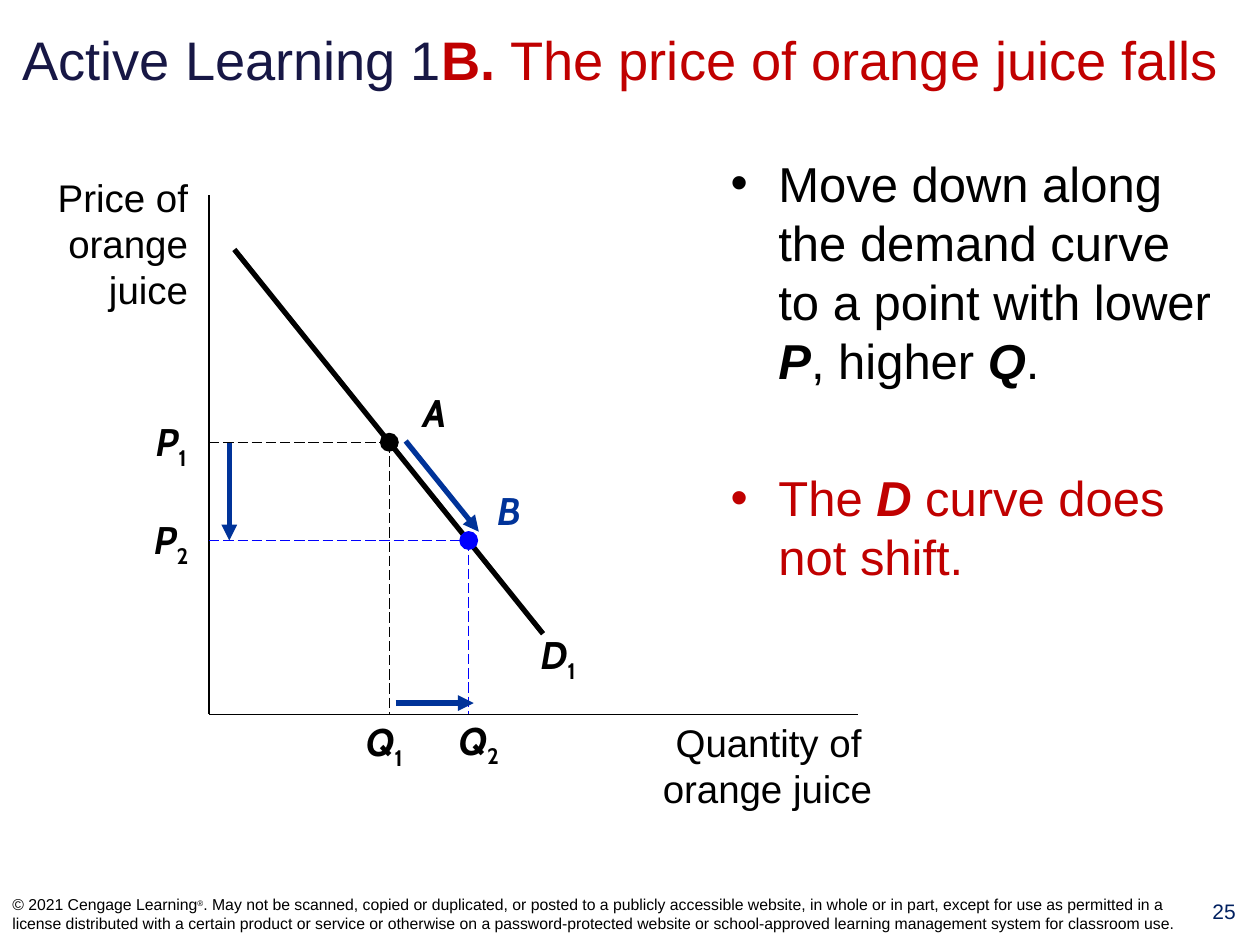
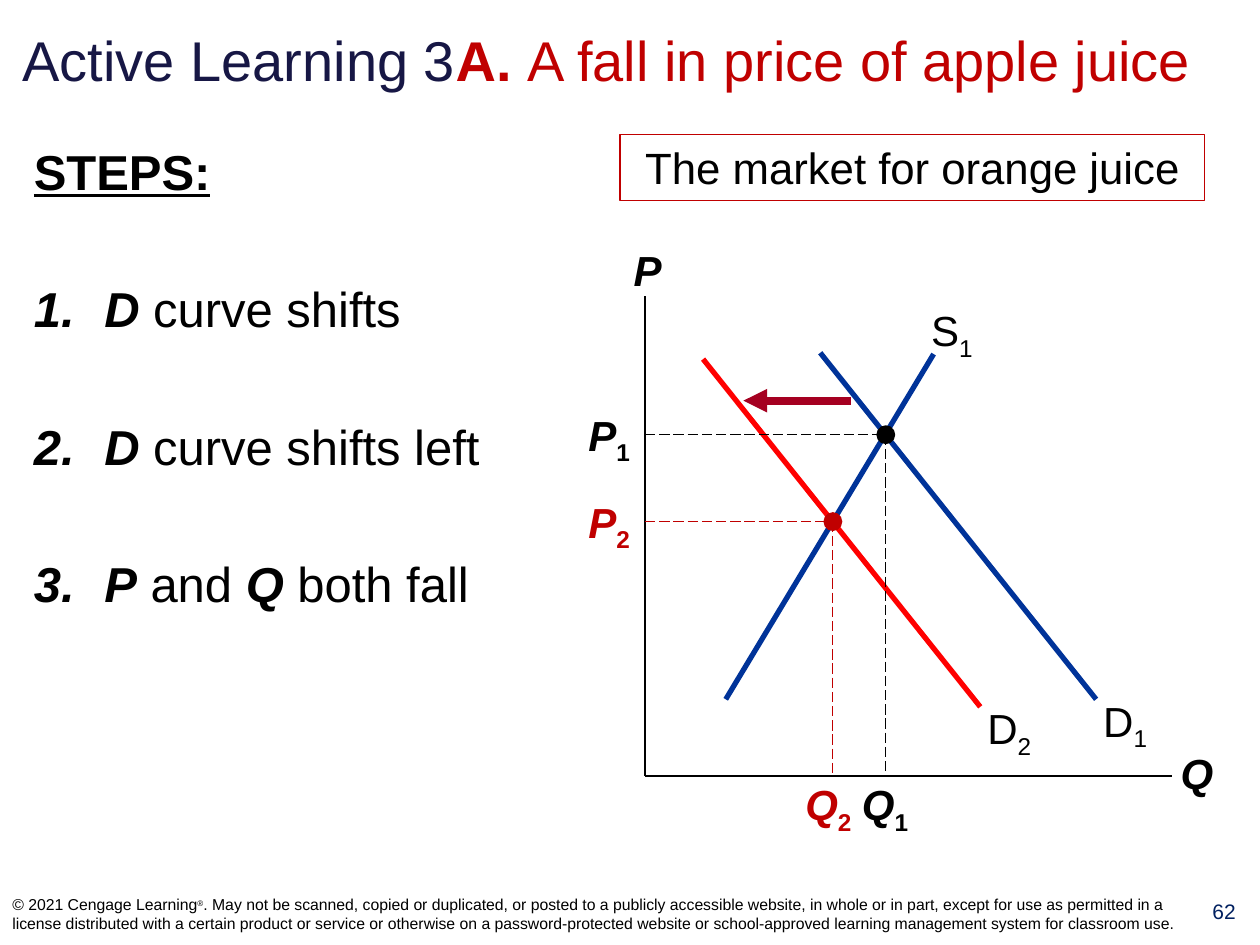
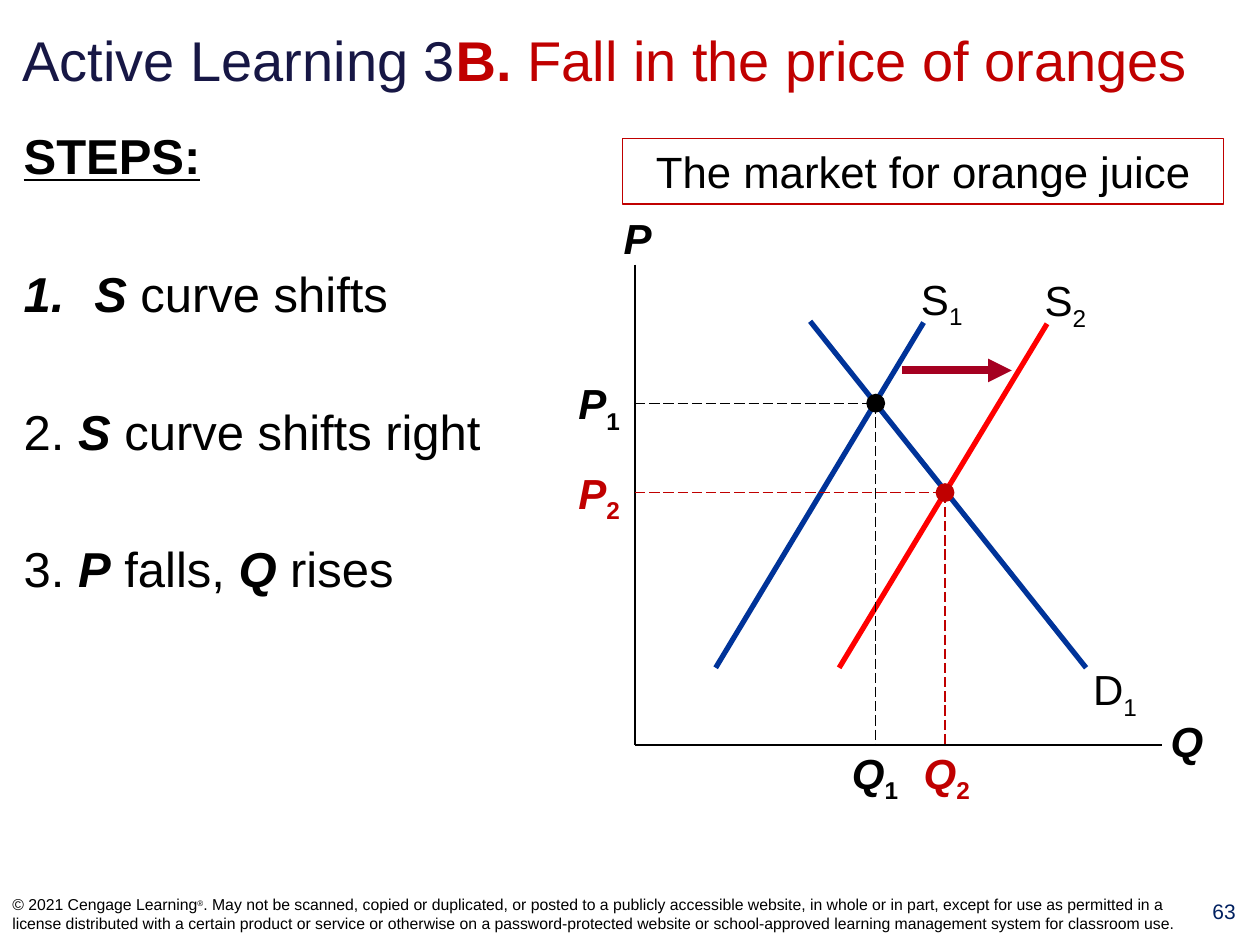
from dataclasses import dataclass
from typing import NamedTuple, Optional

from lxml.etree import SubElement
from pptx import Presentation
from pptx.dml.color import RGBColor
from pptx.enum.dml import MSO_LINE
from pptx.enum.shapes import MSO_CONNECTOR, MSO_SHAPE
from pptx.enum.text import MSO_ANCHOR as Anchor, PP_ALIGN as Align
from pptx.oxml.ns import qn
from pptx.util import Inches, Pt

BLACK = RGBColor(0x00, 0x00, 0x00)
WHITE = RGBColor(0xFF, 0xFF, 0xFF)
NAVY = RGBColor(0x17, 0x17, 0x45)
PAGE_BLUE = RGBColor(0x00, 0x20, 0x60)
CURVE_BLUE = RGBColor(0x00, 0x33, 0x99)
POINT_BLUE = RGBColor(0x00, 0x00, 0xFF)
DARK_RED = RGBColor(0xC0, 0x00, 0x00)
CURVE_RED = RGBColor(0xFF, 0x00, 0x00)
ARROW_RED = RGBColor(0xA5, 0x00, 0x21)

LICENSE = (
    ". May not be scanned, copied or duplicated, or posted to a publicly accessible "
    "website, in whole or in part, except for use as permitted in a license distributed "
    "with a certain product or service or otherwise on a password-protected website or "
    "school-approved learning management system for classroom use."
)
DOT_SIZE = 0.15
STEP_GAP = 45  # points between body paragraphs


class Point(NamedTuple):
    x: float
    y: float


class Area(NamedTuple):
    left: float
    top: float
    width: float
    height: float


@dataclass
class Span:
    text: str
    bold: bool = False
    italic: bool = False
    underline: bool = False
    color: Optional[RGBColor] = None
    size: Optional[float] = None
    baseline: int = 0


@dataclass
class Para:
    spans: list[Span]
    bullet: str = ""  # a character, or "1." for automatic numbers
    indent: float = 0
    color: RGBColor = BLACK


@dataclass
class Curve:
    name: str
    number: str
    start: Point
    end: Point
    color: RGBColor


@dataclass
class Shift:
    """What moves in the market: measured right of and above the origin."""
    curve: Curve
    arrow: tuple[Point, Point]
    balance: Point
    quantity_shift: float


DEMAND = Curve("D", "1", Point(1.39, 3.36), Point(3.58, 0.61), CURVE_BLUE)
SUPPLY = Curve("S", "1", Point(0.64, 0.61), Point(2.29, 3.35), CURVE_BLUE)
CURVE_LABELS = {"D": Area(-0.07, -0.08, 0.6, 0.5), "S": Area(-0.17, -0.44, 0.63, 0.5)}


def strong(text: str) -> Span:
    return Span(text, bold=True, italic=True)


def symbol(name: str, number: str = "", bold: bool = True) -> Para:
    """A variable name with an optional subscript."""
    spans = [Span(name, bold=bold, italic=bold)]
    if number:
        spans.append(Span(number, bold=bold, baseline=-25))
    return Para(spans)


# Text
def set_bullet(paragraph, bullet: str, indent: float) -> None:
    properties = paragraph._p.get_or_add_pPr()
    properties.set("marL", str(Inches(indent)))
    properties.set("indent", str(-Inches(indent)))
    if bullet == "1.":
        SubElement(properties, qn("a:buAutoNum"), type="arabicPeriod")
    else:
        SubElement(properties, qn("a:buFont"), typeface="Arial")
        SubElement(properties, qn("a:buChar"), char=bullet)


def write(frame, paras: list[Para], size: float, font: str = "Arial",
          align: Align = Align.LEFT, gap: float = 0) -> None:
    for index, para in enumerate(paras):
        paragraph = frame.add_paragraph() if index else frame.paragraphs[0]
        paragraph.alignment = align
        if index:
            paragraph.space_before = Pt(gap)
        if para.bullet:
            set_bullet(paragraph, para.bullet, para.indent)
        paragraph.font.name = font
        paragraph.font.size = Pt(size)
        paragraph.font.color.rgb = para.color
        for span in para.spans:
            for row, line in enumerate(span.text.split("\n")):
                if row:
                    paragraph.add_line_break()
                run = paragraph.add_run()
                run.text = line
                run.font.bold = span.bold
                run.font.italic = span.italic
                if span.underline:
                    run.font.underline = True
                if span.size:
                    run.font.size = Pt(span.size)
                if span.color is not None:
                    run.font.color.rgb = span.color
                if span.baseline:
                    run._r.get_or_add_rPr().set("baseline", str(span.baseline * 1000))


def add_text(slide, area: Area, paras: list[Para], size: float, font: str = "Arial",
             align: Align = Align.LEFT, gap: float = 0, anchor: Anchor = Anchor.TOP,
             inset: bool = True) -> None:
    frame = slide.shapes.add_textbox(*map(Inches, area)).text_frame
    frame.word_wrap = True
    frame.vertical_anchor = anchor
    if not inset:
        frame.margin_left = frame.margin_right = Inches(0)
        frame.margin_top = frame.margin_bottom = Inches(0)
    write(frame, paras, size, font, align, gap)


# Lines and dots
def add_line(slide, start: Point, end: Point, color: RGBColor, width: float,
             dashed: bool = False, arrow: bool = False) -> None:
    line = slide.shapes.add_connector(
        MSO_CONNECTOR.STRAIGHT, *map(Inches, (*start, *end)))
    line.line.color.rgb = color
    line.line.width = Pt(width)
    if dashed:
        line.line.dash_style = MSO_LINE.LONG_DASH
    if arrow:
        SubElement(line.line._get_or_add_ln(), qn("a:tailEnd"), type="triangle")
    SubElement(line._element.spPr, qn("a:effectLst"))


def add_axes(slide, origin: Point, height: float, width: float) -> None:
    add_line(slide, Point(origin.x, origin.y - height), origin, BLACK, 1)
    add_line(slide, origin, Point(origin.x + width, origin.y), BLACK, 1)


def add_balance(slide, origin: Point, point: Point, color: RGBColor) -> None:
    """A dot with dashed guides to both axes."""
    add_line(slide, Point(origin.x, point.y), point, color, 0.75, dashed=True)
    add_line(slide, point, Point(point.x, origin.y), color, 0.75, dashed=True)
    dot = slide.shapes.add_shape(
        MSO_SHAPE.OVAL, Inches(point.x - DOT_SIZE / 2), Inches(point.y - DOT_SIZE / 2),
        Inches(DOT_SIZE), Inches(DOT_SIZE))
    dot.shadow.inherit = False
    dot.fill.solid()
    dot.fill.fore_color.rgb = color
    dot.line.fill.background()


# Parts every slide has
def add_page(deck, number: int, lead: str, letter: str, topic: str, title_size: float):
    slide = deck.slides.add_slide(deck.slide_layouts[6])
    title = Para([Span(lead, color=NAVY), Span(f"{letter}. ", bold=True), Span(topic)],
                 color=DARK_RED)
    add_text(slide, Area(0.08, 0.11, 9.75, 0.72), [title], title_size,
             anchor=Anchor.MIDDLE)
    add_text(slide, Area(9.43, 7.08, 0.57, 0.41),
             [Para([Span(str(number))], color=PAGE_BLUE)], 12, align=Align.CENTER)
    footer = Para([Span("© 2021 Cengage Learning"), Span("®", size=8, baseline=30),
                   Span(LICENSE)])
    add_text(slide, Area(0, 7, 9.5, 0.5), [footer], 9, anchor=Anchor.MIDDLE)
    return slide


def add_market(slide, origin: Point, heading: Area, shift: Shift) -> None:
    """Supply and demand before and after one curve shifts."""
    def place(offset: Point) -> Point:
        return Point(origin.x + offset.x, origin.y - offset.y)

    def label(area: Area, para: Para, inset: bool = True) -> None:
        add_text(slide, area, [para], 24, align=Align.CENTER, inset=inset)

    add_axes(slide, origin, 3.81, 4.18)
    label(Area(origin.x - 0.21, origin.y - 4.27, 0.46, 0.5), symbol("P"))
    label(Area(origin.x + 4.13, origin.y - 0.28, 0.5, 0.5), symbol("Q"))

    for curve in (DEMAND, SUPPLY, shift.curve):
        end = place(curve.end)
        add_line(slide, place(curve.start), end, curve.color, 3)
        spot = CURVE_LABELS[curve.name]
        label(Area(end.x + spot.left, end.y + spot.top, spot.width, spot.height),
              symbol(curve.name, curve.number, bold=False))

    balances = (("1", Point(1.91, 2.71), -0.27, BLACK),
                ("2", shift.balance, shift.quantity_shift, DARK_RED))
    for number, offset, quantity_shift, color in balances:
        point = place(offset)
        add_balance(slide, origin, point, color)
        price, quantity = symbol("P", number), symbol("Q", number)
        price.color = quantity.color = color
        label(Area(origin.x - 0.55, point.y - 0.2, 0.53, 0.4), price, inset=False)
        label(Area(point.x + quantity_shift, origin.y + 0.02, 0.53, 0.4), quantity,
              inset=False)

    start, end = map(place, shift.arrow)
    add_line(slide, start, end, ARROW_RED, 4.5, arrow=True)

    box = slide.shapes.add_shape(MSO_SHAPE.RECTANGLE, *map(Inches, heading))
    box.shadow.inherit = False
    box.fill.solid()
    box.fill.fore_color.rgb = WHITE
    box.line.color.rgb = DARK_RED
    box.line.width = Pt(0.75)
    box.text_frame.word_wrap = True
    box.text_frame.vertical_anchor = Anchor.TOP
    write(box.text_frame, [Para([Span("The market for orange juice")])], 25,
          align=Align.CENTER)


# Slides
def build_price_falls(deck) -> None:
    slide = add_page(deck, 25, "Active Learning 1", "B",
                     "The price of orange juice falls", 31)
    add_text(slide, Area(5.7, 1.17, 4.03, 5.58), [
        Para([Span("Move down along the demand curve to a point with lower "),
              strong("P"), Span(", higher "), strong("Q"), Span(".")], "•", 0.38),
        Para([Span("The "), strong("D"), Span(" curve does not shift.")], "•", 0.38,
             DARK_RED),
    ], 28, gap=STEP_GAP)

    origin = Point(1.66, 5.67)
    add_axes(slide, origin, 4.12, 5.15)
    for area, name in ((Area(0.17, 1.33, 1.42, 1.21), "Price of orange juice"),
                       (Area(4.14, 5.66, 2.88, 0.83), "Quantity of \norange juice")):
        add_text(slide, area, [Para([Span(name)])], 22, align=Align.RIGHT)

    add_line(slide, Point(1.86, 1.98), Point(4.31, 5.03), BLACK, 3)
    add_balance(slide, origin, Point(3.09, 3.51), BLACK)
    add_balance(slide, origin, Point(3.72, 4.29), POINT_BLUE)

    point_b = symbol("B")
    point_b.color = CURVE_BLUE
    labels = (
        (Point(1.03, 3.27), symbol("P", "1")),
        (Point(1.03, 4.05), symbol("P", "2")),
        (Point(2.72, 5.65), symbol("Q", "1")),
        (Point(3.47, 5.64), symbol("Q", "2")),
        (Point(4.1, 4.96), symbol("D", "1")),
        (Point(3.12, 3.04), symbol("A")),
        (Point(3.71, 3.82), point_b),
    )
    for corner, para in labels:
        add_text(slide, Area(*corner, 0.66, 0.47), [para], 22, "Cabin", Align.CENTER)

    # Moves in price, in quantity and along the curve
    for start, end in ((Point(1.82, 3.52), Point(1.82, 4.29)),
                       (Point(3.14, 5.58), Point(3.76, 5.58)),
                       (Point(3.22, 3.5), Point(3.8, 4.22))):
        add_line(slide, start, end, CURVE_BLUE, 3, arrow=True)


def build_apple_juice(deck) -> None:
    slide = add_page(deck, 62, "Active Learning 3", "A",
                     "A fall in price of apple juice", 32)
    add_text(slide, Area(0.17, 1.07, 4.66, 5.68), [
        Para([Span("STEPS:", bold=True, underline=True)]),
        Para([strong("D"), Span(" curve shifts")], "1.", 0.56),
        Para([strong("D"), Span(" curve shifts left")], "1.", 0.56),
        Para([strong("P"), Span(" and "), strong("Q"), Span(" both fall")], "1.", 0.56),
    ], 28, gap=STEP_GAP)
    add_market(slide, Point(5.12, 6.16), Area(4.92, 1.07, 4.64, 0.52), Shift(
        Curve("D", "2", Point(0.46, 3.31), Point(2.66, 0.55), CURVE_RED),
        (Point(1.63, 2.98), Point(0.78, 2.98)), Point(1.49, 2.02), -0.3))


def build_orange_price(deck) -> None:
    slide = add_page(deck, 63, "Active Learning 3", "B",
                     "Fall in the price of oranges", 32)
    add_text(slide, Area(0.09, 0.95, 4.74, 5.83), [
        Para([Span("STEPS:", bold=True, underline=True)]),
        Para([strong("S"), Span(" curve shifts")], "1.", 0.56),
        Para([Span("2. "), strong("S"), Span(" curve shifts right")]),
        Para([Span("3. "), strong("P"), Span(" falls, "), strong("Q"), Span(" rises")]),
    ], 28, gap=STEP_GAP)
    add_market(slide, Point(5.04, 5.91), Area(4.94, 1.1, 4.77, 0.52), Shift(
        Curve("S", "2", Point(1.62, 0.61), Point(3.27, 3.34), CURVE_RED),
        (Point(2.12, 2.97), Point(2.99, 2.97)), Point(2.46, 2), -0.25))


def main() -> None:
    deck = Presentation()
    deck.slide_width, deck.slide_height = Inches(10), Inches(7.5)
    build_price_falls(deck)
    build_apple_juice(deck)
    build_orange_price(deck)
    deck.save("out.pptx")


if __name__ == "__main__":
    main()
